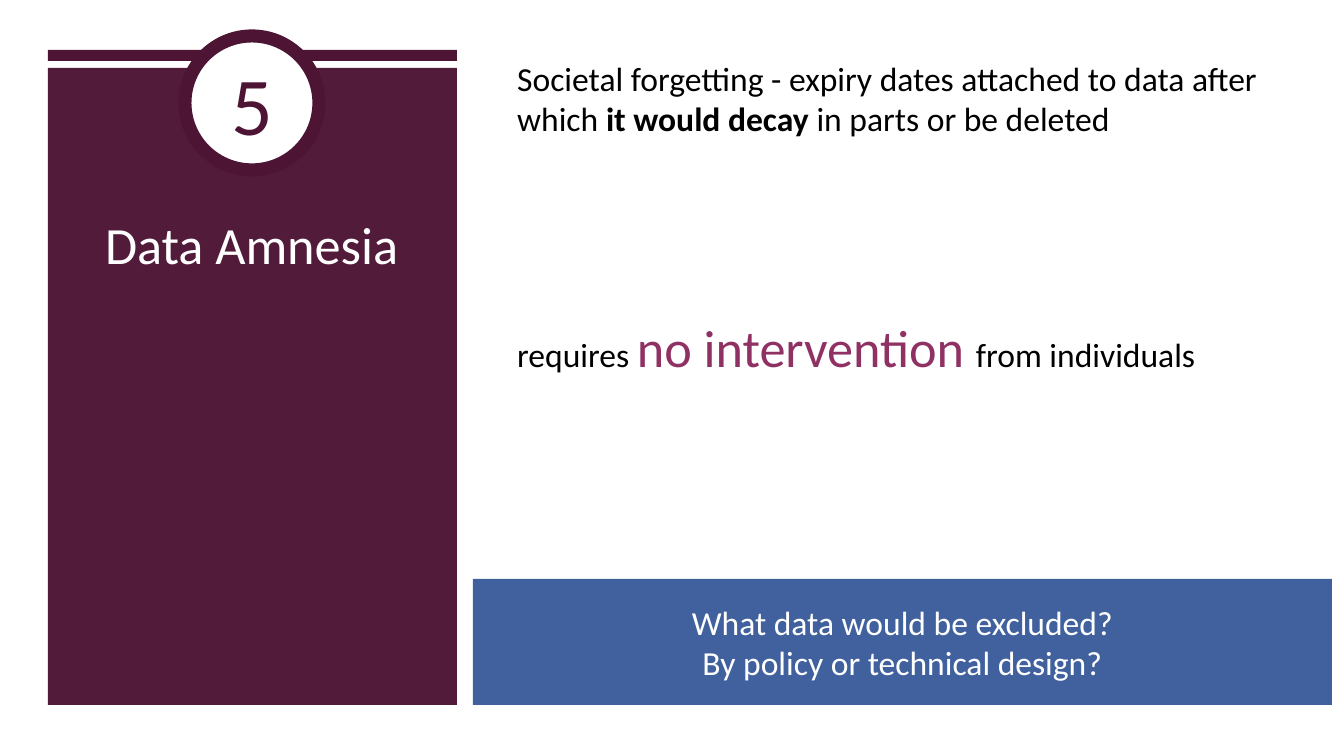
from lxml.etree import SubElement
from pptx import Presentation
from pptx.dml.color import RGBColor
from pptx.enum.shapes import MSO_SHAPE as Shape
from pptx.enum.text import MSO_ANCHOR as Anchor, PP_ALIGN as Align
from pptx.oxml.ns import qn
from pptx.util import Pt

PLUM, ROSE, BLUE = "4D1434", "903163", "40619D"
WHITE, BLACK = "FFFFFF", "000000"
FONT = "Calibri"
PX = 914400 / 134.4

TITLE = ("Data Amnesia", (78, 206, 347, 481))
NUMBER = ("5", (185, 36, 134, 134))
PANEL = (48, 68, 409, 637)
PANEL_OPACITY = 97
BAR = (48, 50, 409, 11)
STATEMENTS = [
    ((504, 51, 792, 95), [
        ("Societal forgetting - expiry dates attached to data after which ", 18, BLACK, False),
        ("it would decay ", 18, BLACK, True),
        ("in parts or be deleted", 18, BLACK, False),
    ]),
    ((504, 309, 720, 77), [
        ("requires ", 18, BLACK, False),
        ("no intervention ", 28, ROSE, False),
        ("from individuals", 18, BLACK, False),
    ]),
]
QUESTIONS = (
    ["What data would be excluded?", "By policy or technical design?"],
    (473, 579, 859, 126),
)


def color(value):
    return RGBColor.from_string(value)


def emu(frame):
    return [round(length * PX) for length in frame]


def style(font, size, value, bold=False):
    font.name = FONT
    font.size = Pt(size)
    font.bold = bold
    font.color.rgb = color(value)


def add_block(slide, kind, frame, fill):
    block = slide.shapes.add_shape(kind, *emu(frame))
    block.shadow.inherit = False
    block.fill.solid()
    block.fill.fore_color.rgb = color(fill)
    block.line.fill.background()
    return block


def write_centered(shape, lines, size, value, anchor=Anchor.MIDDLE):
    text = shape.text_frame
    text.word_wrap = True
    text.vertical_anchor = anchor
    text.text = "\n".join(lines)
    for para in text.paragraphs:
        para.alignment = Align.CENTER
        style(para.font, size, value)


def add_statement(slide, frame, spans):
    box = slide.shapes.add_textbox(*emu(frame))
    box.text_frame.word_wrap = True
    para = box.text_frame.paragraphs[0]
    for words, size, value, bold in spans:
        span = para.add_run()
        span.text = words
        style(span.font, size, value, bold)


def main():
    deck = Presentation()
    deck.slide_width, deck.slide_height = emu((1344, 756))
    slide = deck.slides.add_slide(deck.slide_layouts[5])

    panel = add_block(slide, Shape.RECTANGLE, PANEL, PLUM)
    panel_color = panel.fill._xPr.find(qn("a:solidFill"))[0]
    SubElement(panel_color, qn("a:alpha"), val=str(PANEL_OPACITY * 1000))
    add_block(slide, Shape.RECTANGLE, BAR, PLUM)

    words, frame = TITLE
    title = slide.shapes.title
    title.left, title.top, title.width, title.height = emu(frame)
    write_centered(title, [words], 28, WHITE, Anchor.TOP)
    slide.shapes._spTree.append(title._element)

    words, frame = NUMBER
    badge = add_block(slide, Shape.OVAL, frame, WHITE)
    badge.line.color.rgb = color(PLUM)
    badge.line.width = Pt(7)
    write_centered(badge, [words], 44, PLUM)

    for frame, spans in STATEMENTS:
        add_statement(slide, frame, spans)

    lines, frame = QUESTIONS
    banner = add_block(slide, Shape.RECTANGLE, frame, BLUE)
    write_centered(banner, lines, 18, WHITE)

    deck.save("out.pptx")


if __name__ == "__main__":
    main()
